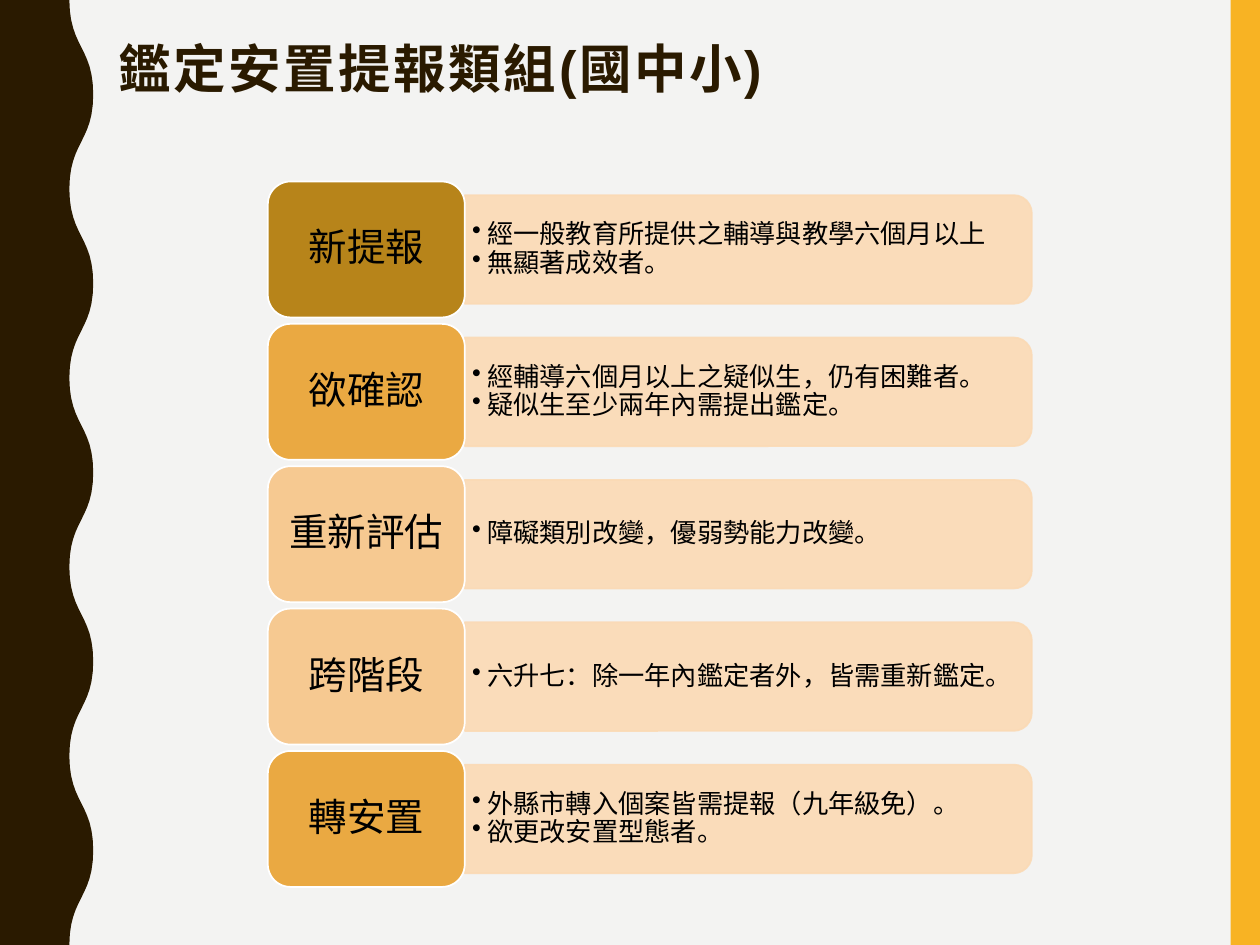
"""Build the slide on identification and placement categories."""
from lxml import etree
from pptx import Presentation
from pptx import util as u
from pptx.dml.color import RGBColor
from pptx.enum import shapes, text
from pptx.oxml.ns import qn

PAPER = RGBColor(0xF3, 0xF3, 0xF2)
DARK = RGBColor(0x2A, 0x1A, 0x00)
YELLOW = RGBColor(0xF8, 0xB3, 0x23)
PEACH = RGBColor(0xFB, 0xDA, 0xB5)
BROWN = RGBColor(0xB7, 0x84, 0x1A)
ORANGE = RGBColor(0xEA, 0xA9, 0x42)
SAND = RGBColor(0xF6, 0xC9, 0x91)
WHITE = RGBColor(0xFF, 0xFF, 0xFF)
BLACK = RGBColor(0, 0, 0)
CJK = "Noto Sans CJK SC"

TITLE = "鑑定安置提報類組(國中小)"
ROWS = [
    ("新提報", BROWN, ["經一般教育所提供之輔導與教學六個月以上", "無顯著成效者。"]),
    ("欲確認", ORANGE, ["經輔導六個月以上之疑似生，仍有困難者。", "疑似生至少兩年內需提出鑑定。"]),
    ("重新評估", SAND, ["障礙類別改變，優弱勢能力改變。"]),
    ("跨階段", SAND, ["六升七：除一年內鑑定者外，皆需重新鑑定。"]),
    ("轉安置", ORANGE, ["外縣市轉入個案皆需提報（九年級免）。", "欲更改安置型態者。"]),
]

SLIDE_W, SLIDE_H = 25.4, 19.05
WAVE_IN, WAVE_OUT, WAVES, STEPS = 1.4, 1.88, 10, 12
TOP, PITCH = 3.66, 2.87
LABEL_X, LABEL_W, LABEL_H = 5.4, 3.97, 2.74
CARD_W, CARD_H = 11.43, 2.19
TEXT_W, TEXT_H = 11.3, 1.98


def paint(s, fill, line=None):
    s.shadow.inherit = False
    s.fill.solid()
    s.fill.fore_color.rgb = fill
    if line is None:
        s.line.fill.background()
    else:
        s.line.color.rgb = line
        s.line.width = u.Pt(1)


def add_shape(slide, kind, x, y, w, h, fill, line=None):
    s = slide.shapes.add_shape(kind, u.Cm(x), u.Cm(y), u.Cm(w), u.Cm(h))
    paint(s, fill, line)
    return s


def set_frame(tf, anchor, side, end):
    tf.word_wrap = True
    tf.vertical_anchor = anchor
    tf.margin_left = tf.margin_right = u.Cm(side)
    tf.margin_top = tf.margin_bottom = u.Cm(end)


def add_run(p, words, size, color, font):
    p.line_spacing = 0.9
    r = p.add_run()
    r.text = words
    r.font.size = u.Pt(size)
    r.font.color.rgb = color
    r.font.name = font
    ea = etree.SubElement(r._r.get_or_add_rPr(), qn("a:ea"))
    ea.set("typeface", CJK)
    return r


def add_wave(slide):
    points = []
    for i in range(WAVES):
        a, b = (WAVE_IN, WAVE_OUT) if i % 2 == 0 else (WAVE_OUT, WAVE_IN)
        for k in range(STEPS + 1):
            t = k / STEPS
            x = a + (b - a) * (3 * t**2 - 2 * t**3)
            y = i + 1.5 * t * (1 - t) + t**3
            points.append((u.Cm(x), u.Cm(y * SLIDE_H / WAVES)))
    builder = slide.shapes.build_freeform(0, 0)
    builder.add_line_segments(points + [(0, u.Cm(SLIDE_H))], close=True)
    paint(builder.convert_to_shape(), DARK)


def add_title(slide):
    tf = slide.shapes.add_textbox(u.Cm(2.13), u.Cm(0.74), u.Cm(21.21), u.Cm(2.21)).text_frame
    set_frame(tf, text.MSO_ANCHOR.TOP, 0.25, 0.13)
    r = add_run(tf.paragraphs[0], TITLE, 30, DARK, "Arial")
    r.font.bold = True
    r._r.get_or_add_rPr().set("spc", "150")


def add_card(slide, x, middle, lines):
    s = add_shape(slide, shapes.MSO_SHAPE.ROUND_2_SAME_RECTANGLE, x + (CARD_W - CARD_H) / 2,
                  middle - CARD_W / 2, CARD_H, CARD_W, PEACH, PEACH)
    s.rotation = 90
    for color in s._element.spPr.iter(qn("a:srgbClr")):
        etree.SubElement(color, qn("a:alpha")).set("val", "90000")
    tf = slide.shapes.add_textbox(u.Cm(x), u.Cm(middle - TEXT_H / 2),
                                  u.Cm(TEXT_W), u.Cm(TEXT_H)).text_frame
    set_frame(tf, text.MSO_ANCHOR.MIDDLE, 0.15, 0.08)
    for i, words in enumerate(lines):
        p = tf.add_paragraph() if i else tf.paragraphs[0]
        pPr = p._p.get_or_add_pPr()
        pPr.set("marL", str(u.Cm(0.3)))
        pPr.set("indent", str(-u.Cm(0.3)))
        etree.SubElement(pPr, qn("a:buChar")).set("char", "•")
        add_run(p, words, 15, BLACK, CJK)


def add_label(slide, y, words, fill):
    s = add_shape(slide, shapes.MSO_SHAPE.ROUNDED_RECTANGLE, LABEL_X, y, LABEL_W, LABEL_H, fill, WHITE)
    set_frame(s.text_frame, text.MSO_ANCHOR.MIDDLE, 0.23, 0.13)
    p = s.text_frame.paragraphs[0]
    p.alignment = text.PP_ALIGN.CENTER
    add_run(p, words, 22, BLACK, CJK)


def main():
    prs = Presentation()
    prs.slide_width, prs.slide_height = u.Cm(SLIDE_W), u.Cm(SLIDE_H)
    slide = prs.slides.add_slide(prs.slide_layouts[6])
    slide.background.fill.solid()
    slide.background.fill.fore_color.rgb = PAPER
    add_shape(slide, shapes.MSO_SHAPE.RECTANGLE, 24.81, 0, 0.59, SLIDE_H, YELLOW)
    add_wave(slide)
    add_title(slide)
    for i, (label, fill, lines) in enumerate(ROWS):
        y = TOP + i * PITCH
        add_card(slide, LABEL_X + LABEL_W, y + LABEL_H / 2, lines)
        add_label(slide, y, label, fill)
    prs.save("out.pptx")


if __name__ == "__main__":
    main()
